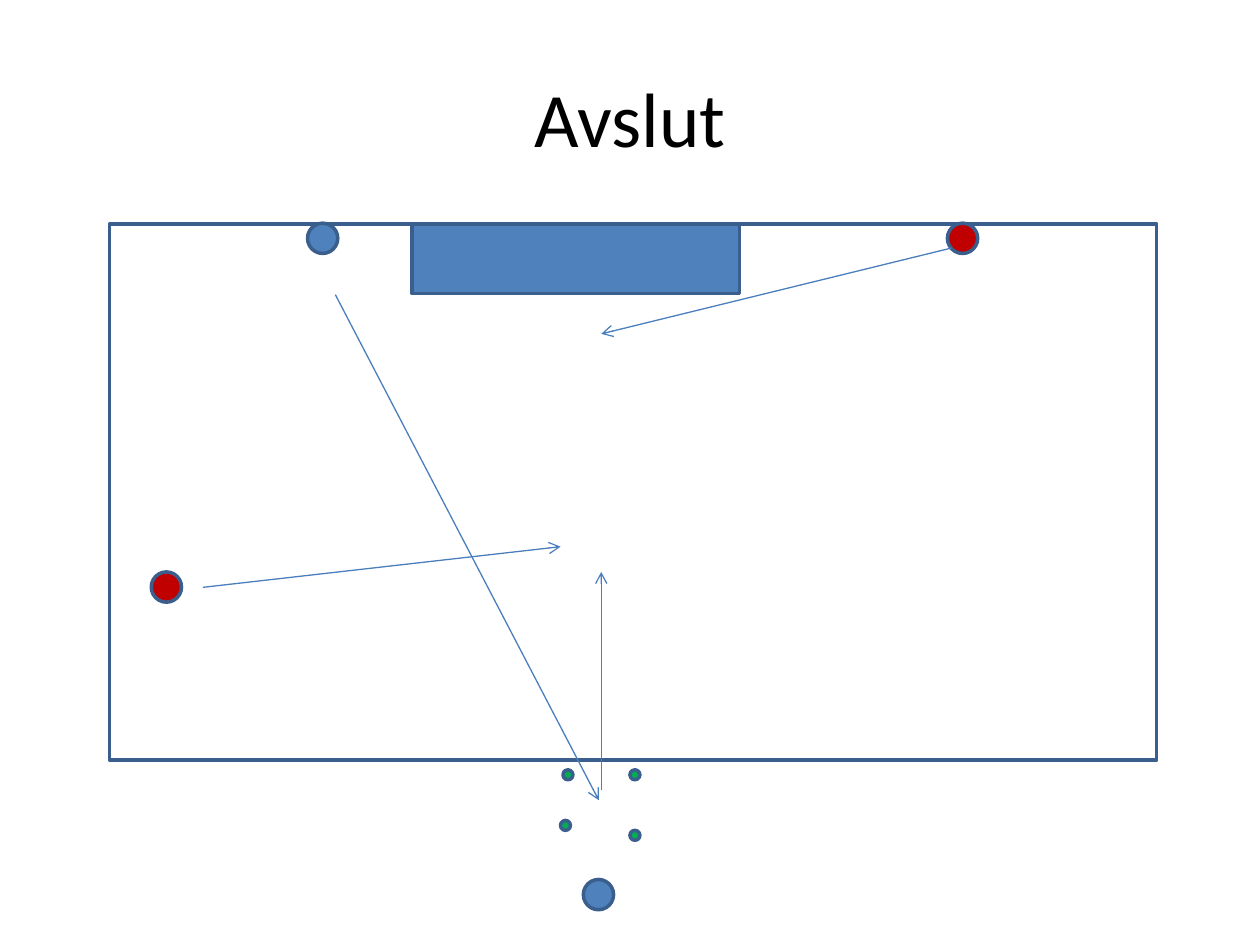
from lxml import etree
from pptx import Presentation
from pptx.dml.color import RGBColor
from pptx.enum.shapes import MSO_CONNECTOR, MSO_SHAPE
from pptx.enum.text import MSO_ANCHOR, PP_ALIGN
from pptx.oxml.ns import qn
from pptx.util import Cm, Pt

RECT, OVAL = MSO_SHAPE.RECTANGLE, MSO_SHAPE.OVAL
STRAIGHT = MSO_CONNECTOR.STRAIGHT
MIDDLE, CENTER = MSO_ANCHOR.MIDDLE, PP_ALIGN.CENTER
BLACK = RGBColor(0x00, 0x00, 0x00)
BLUE = RGBColor(0x4F, 0x81, 0xBD)
NAVY = RGBColor(0x3A, 0x5F, 0x8C)
SKY = RGBColor(0x4B, 0x7E, 0xBC)
RED = RGBColor(0xC0, 0x00, 0x00)
GREEN = RGBColor(0x00, 0xB0, 0x50)

PLAYER, CONE = 0.61, 0.2
CONES = [(12.7, 16.74), (11.3, 16.54), (11.35, 15.52), (12.7, 15.52)]
PLAYERS = [(11.76, 17.73, BLUE), (3.05, 11.53, RED),
           (19.1, 4.5, RED), (6.2, 4.5, BLUE)]
RUNS = [(12.12, 15.93, 12.12, 11.53), (6.76, 5.94, 12.07, 16.13),
        (4.09, 11.84, 11.3, 11.02), (19.18, 5, 12.12, 6.73)]


def assign(item, values):
    for name, value in values.items():
        setattr(item, name, value)


class Drill:
    """Draws the parts of a training drill on one slide."""

    font = {"name": "Calibri", "size": Pt(44)}
    frame = {"word_wrap": True, "vertical_anchor": MIDDLE}
    edge = {"width": Pt(2)}
    thin = {"width": Pt(0.75)}

    def __init__(self, slide):
        self.shapes = slide.shapes

    def title(self, text, *box):
        frame = self.shapes.add_textbox(*map(Cm, box)).text_frame
        assign(frame, self.frame)
        para = frame.paragraphs[0]
        assign(para, {"text": text, "alignment": CENTER})
        font = para.runs[0].font
        assign(font, self.font)
        font.color.rgb = BLACK

    def shape(self, kind, box, fill=None):
        shape = self.shapes.add_shape(kind, *map(Cm, box))
        shape.shadow.inherit = False
        if fill is None:
            shape.fill.background()
        else:
            shape.fill.solid()
            shape.fill.fore_color.rgb = fill
        assign(shape.line, self.edge)
        shape.line.color.rgb = NAVY

    def dot(self, left, top, size, fill):
        self.shape(OVAL, (left, top, size, size), fill)

    def arrow(self, *ends):
        link = self.shapes.add_connector(STRAIGHT, *map(Cm, ends))
        assign(link.line, self.thin)
        link.line.color.rgb = SKY
        props = link.line._get_or_add_ln()
        etree.SubElement(props, qn("a:tailEnd"), type="arrow")
        etree.SubElement(link._element.spPr, qn("a:effectLst"))


def main():
    deck = Presentation()
    assign(deck, {"slide_width": Cm(25.4), "slide_height": Cm(19.05)})
    drill = Drill(deck.slides.add_slide(deck.slide_layouts[6]))
    drill.title("Avslut", 1.27, 0.76, 22.86, 3.18)
    drill.shape(RECT, (8.31, 4.52, 6.6, 1.4), BLUE)
    drill.shape(RECT, (2.21, 4.52, 21.11, 10.8))
    for left, top in CONES:
        drill.dot(left, top, CONE, GREEN)
    for left, top, fill in PLAYERS:
        drill.dot(left, top, PLAYER, fill)
    for ends in RUNS:
        drill.arrow(*ends)
    deck.save("out.pptx")


if __name__ == "__main__":
    main()
